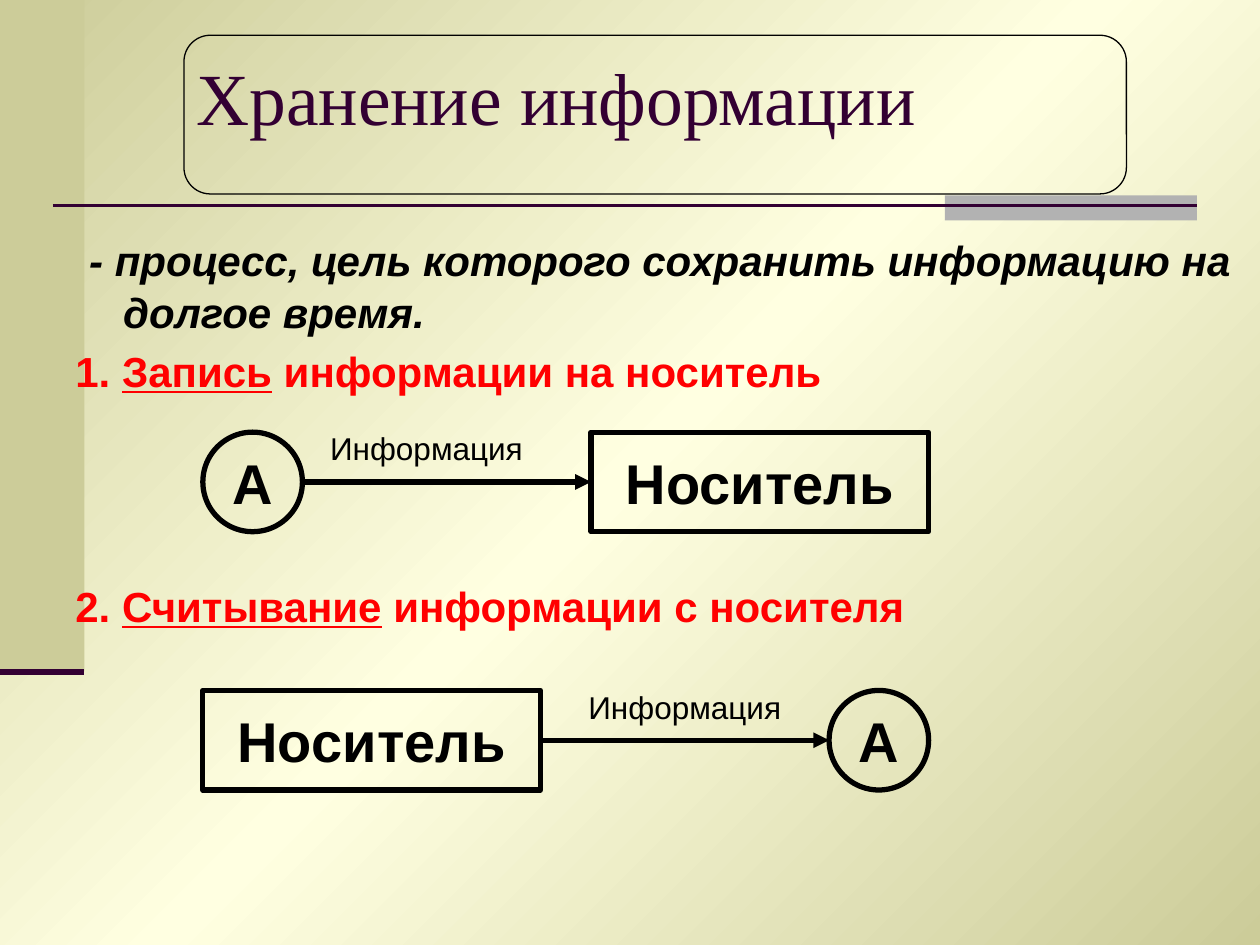
from copy import deepcopy
from pptx import Presentation
from pptx.dml.color import RGBColor
from pptx.enum.shapes import MSO_CONNECTOR as CONN, MSO_SHAPE as SHAPE
from pptx.enum.text import MSO_ANCHOR as ANCHOR, PP_ALIGN as ALIGN
from pptx.oxml.ns import qn
from pptx.util import Inches, Pt

# Content
TITLE = "Хранение информации"
DEFINITION = "- процесс, цель которого сохранить информацию на долгое время."
STEPS = [  # number, underlined word, rest, space before in points
    ("1. ", "Запись", " информации на носитель", 4),
    ("2. ", "Считывание", " информации с носителя", 104.6),
]
PERSON, CARRIER, FLOW = "А", "Носитель", "Информация"
FLOWS = [  # top, left node, right node, label left
    (3.43, (SHAPE.OVAL, PERSON), (SHAPE.FLOWCHART_PROCESS, CARRIER), 2.48),
    (5.48, (SHAPE.RECTANGLE, CARRIER), (SHAPE.OVAL, PERSON), 4.53),
]
WIDTHS = {PERSON: 0.79, CARRIER: 2.68}
FLOW_LEFT, FLOW_RIGHT, NODE_H = 1.61, 7.37, 0.79

THEME = {
    "sand": "CCCC99", "cream": "FFFFE1", "plum": "330033", "gray": "B2B2B2",
    "red": "FF0000", "black": "000000",
    "serif": "Times New Roman", "sans": "Arial",
    "title": 42, "node": 32, "body": 24, "label": 18, "leading": 29.7,
}


def color(name):
    return RGBColor.from_string(THEME[name])


def style(font, size, ink="black", face="sans", bold=False, italic=False):
    font.name, font.size = THEME[face], Pt(THEME[size])
    font.color.rgb, font.bold, font.italic = color(ink), bold, italic


def add_shape(kind, box, fill=None, line=None, width=0):
    sp = shapes.add_shape(kind, *map(Inches, box))
    sp.shadow.inherit = False
    if fill:
        sp.fill.solid()
        sp.fill.fore_color.rgb = color(fill)
    else:
        sp.fill.background()
    if line:
        sp.line.color.rgb, sp.line.width = color(line), Pt(width)
    else:
        sp.line.fill.background()
    return sp


def add_line(start, end, ink, width):
    ln = shapes.add_connector(CONN.STRAIGHT, *map(Inches, start + end))
    ln.line.color.rgb, ln.line.width = color(ink), Pt(width)
    pr = ln.element.spPr
    pr.append(pr.makeelement(qn("a:effectLst"), {}))
    return ln


def add_text(box):
    tf = shapes.add_textbox(*map(Inches, box)).text_frame
    tf.word_wrap = True
    return tf


def add_node(kind, text, left, top):
    sp = add_shape(kind, (left, top, WIDTHS[text], NODE_H), line="black", width=3)
    tf = sp.text_frame
    tf.word_wrap, tf.vertical_anchor = False, ANCHOR.MIDDLE
    p = tf.paragraphs[0]
    p.text, p.alignment = text, ALIGN.CENTER
    style(p.font, "node", bold=True)
    return sp


def format_body(p, indent, **look):
    pr = p._p.get_or_add_pPr()
    pr.set("marL", str(Inches(0.38)))
    pr.set("indent", str(Inches(indent)))
    p.line_spacing = Pt(THEME["leading"])
    style(p.font, "body", bold=True, **look)


prs = Presentation()
prs.slide_width, prs.slide_height = Inches(10), Inches(7.5)
slide = prs.slides.add_slide(prs.slide_layouts[6])
shapes = slide.shapes

# Background: sand to cream and back along the diagonal
bg = slide.background.fill
bg.gradient()
bg.gradient_angle = 315
stops = slide.element.find(".//" + qn("a:gsLst"))
stops.append(deepcopy(stops[0]))
for stop, name, pos in zip(bg.gradient_stops, ("sand", "cream", "sand"), (0, 0.5, 1)):
    stop.color.rgb, stop.position = color(name), pos

# Side panel, accent bar and rules
add_shape(SHAPE.RECTANGLE, (0, 0, 0.67, 5.33), fill="sand")
add_shape(SHAPE.RECTANGLE, (7.5, 1.55, 2, 0.2), fill="gray")
add_line((0.42, 1.63), (9.5, 1.63), "plum", 1.5)
add_line((0, 5.33), (0.67, 5.33), "plum", 3.5)

# Title and its frame
p = add_text((1.46, 0.36, 7.48, 1.18)).paragraphs[0]
p.text = TITLE
style(p.font, "title", "plum", "serif")
add_shape(SHAPE.ROUNDED_RECTANGLE, (1.46, 0.28, 7.48, 1.26), line="black", width=0.75)

# Definition and steps
tf = add_text((0.5, 1.8, 9.5, 4.71))
p = tf.paragraphs[0]
p.text = DEFINITION
format_body(p, -0.27, italic=True)
for number, word, rest, gap in STEPS:
    p = tf.add_paragraph()
    for text in (number, word, rest):
        r = p.add_run()
        r.text = text
        if text == word:
            r.font.underline = True
    p.space_before = Pt(gap)
    format_body(p, -0.38, ink="red")

# Flow diagrams
for top, (kind_a, text_a), (kind_b, text_b), label_left in FLOWS:
    start, end = FLOW_LEFT + WIDTHS[text_a], FLOW_RIGHT - WIDTHS[text_b]
    source = add_node(kind_a, text_a, FLOW_LEFT, top)
    target = add_node(kind_b, text_b, end, top)
    mid = top + NODE_H / 2
    arrow = add_line((start, mid), (end, mid), "black", 3)
    if text_a == CARRIER:
        arrow.begin_connect(source, 3)
    else:
        arrow.end_connect(target, 1)
    ln = arrow.line._get_or_add_ln()
    ln.append(ln.makeelement(qn("a:tailEnd"), {"type": "triangle"}))
    p = add_text((label_left, top - 0.07, 1.81, 0.4)).paragraphs[0]
    p.text, p.alignment = FLOW, ALIGN.CENTER
    style(p.font, "label")

prs.save("out.pptx")
